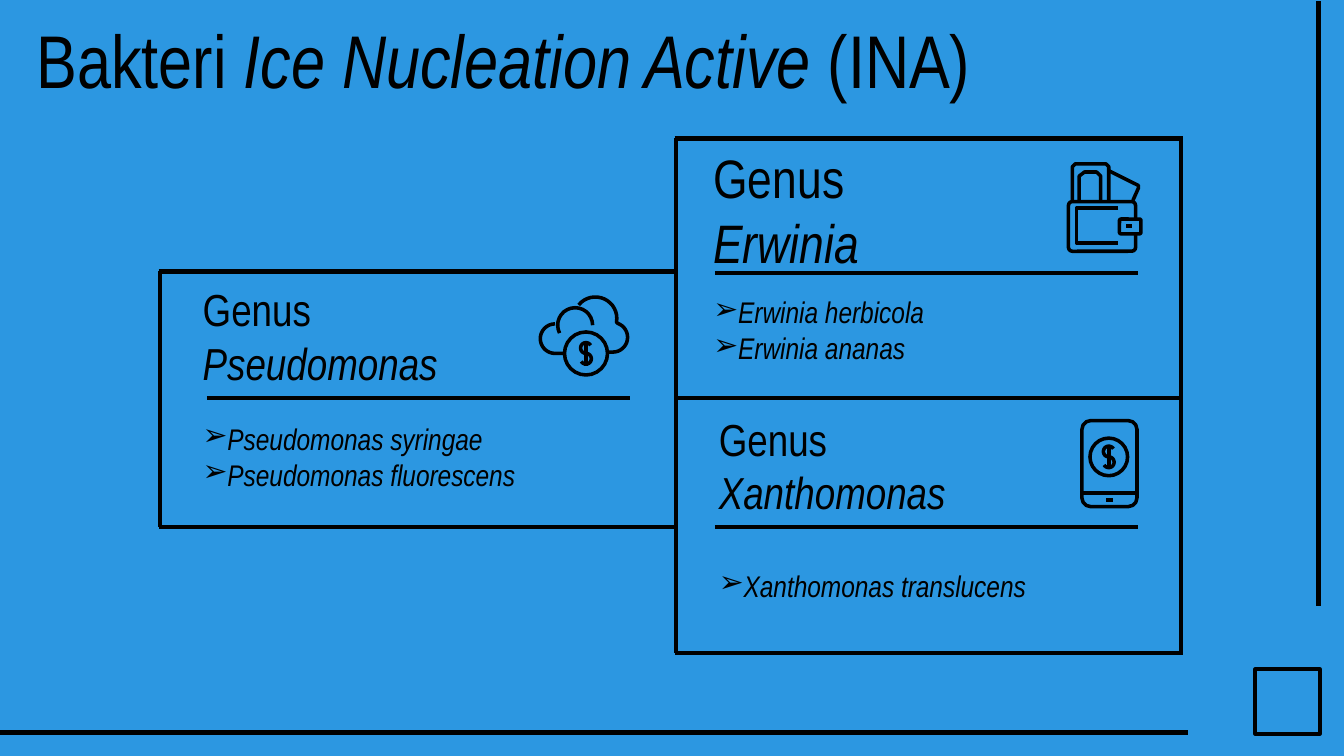
from math import cos, radians, sin

from lxml.etree import SubElement
from pptx import Presentation
from pptx.dml.color import RGBColor
from pptx.enum.shapes import MSO_CONNECTOR, MSO_SHAPE
from pptx.enum.text import MSO_ANCHOR, MSO_AUTO_SIZE, PP_ALIGN
from pptx.oxml.ns import qn
from pptx.util import Inches, Pt

COLORS = {"background": "2C97E1", "ink": "000000"}
FONT = "Arial Narrow"
WIDTH = 10
HEIGHT = WIDTH * 9 / 16
FRAME_WEIGHT, ICON_WEIGHT = 2.25, 1.9

# Grid shared by the cards, in inches
COLUMNS = (1.19, 5.03, 8.79)
ROWS = (1.03, 2.02, 2.96, 3.92, 4.86)
RULE_WIDTH = 3.15

# Cards: heading box, size, rule start, list box, species
CARDS = [
    {"genus": "Pseudomonas", "heading": (1.41, 2.33), "size": 24,
     "rule": (1.54, ROWS[2]), "list": (1.41, 3.06, 3.5),
     "species": ("Pseudomonas syringae", "Pseudomonas fluorescens")},
    {"genus": "Erwinia", "heading": (5.21, 1.39), "size": 29,
     "rule": (5.32, 2.03), "list": (5.21, 2.12, 2.39),
     "species": ("Erwinia herbicola", "Erwinia ananas")},
    {"genus": "Xanthomonas", "heading": (5.25, 3.29), "size": 24,
     "rule": (5.32, ROWS[3]), "list": (5.25, 4.02, 2.95),
     "species": ("Xanthomonas translucens",)},
]


def color(name):
    return RGBColor.from_string(COLORS[name])


def set_line(line, weight):
    line.color.rgb = color("ink")
    line.width = Pt(weight)


def add_line(slide, start, end, weight=FRAME_WEIGHT):
    points = [Inches(value) for value in (*start, *end)]
    line = slide.shapes.add_connector(MSO_CONNECTOR.STRAIGHT, *points)
    set_line(line.line, weight)
    SubElement(line._element.spPr, qn("a:effectLst"))


def add_outline(slide, kind, box, weight=ICON_WEIGHT, radius=None, fill=None):
    shape = slide.shapes.add_shape(kind, *map(Inches, box))
    shape.shadow.inherit = False
    if radius is not None:
        shape.adjustments[0] = radius
    if fill:
        shape.fill.solid()
        shape.fill.fore_color.rgb = color(fill)
    else:
        shape.fill.background()
    set_line(shape.line, weight)


def add_stroke(slide, points):
    first, *rest = [(Inches(x), Inches(y)) for x, y in points]
    builder = slide.shapes.build_freeform(*first)
    builder.add_line_segments(rest, close=False)
    shape = builder.convert_to_shape()
    shape.shadow.inherit = False
    shape.fill.background()
    set_line(shape.line, ICON_WEIGHT)


def arc(x, y, radius, start, end, steps=16):
    angles = [radians(start + (end - start) * i / steps) for i in range(steps + 1)]
    return [(x + radius * cos(a), y + radius * sin(a)) for a in angles]


def format_frame(shape, anchor):
    frame = shape.text_frame
    settings = {"word_wrap": True, "auto_size": MSO_AUTO_SIZE.NONE,
                "vertical_anchor": anchor}
    settings |= {f"margin_{side}": Inches(0.1)
                 for side in ("left", "top", "right", "bottom")}
    for name, value in settings.items():
        setattr(frame, name, value)
    return frame


def add_text_box(slide, box):
    shape = slide.shapes.add_textbox(*map(Inches, box))
    return format_frame(shape, MSO_ANCHOR.MIDDLE)


def add_run(paragraph, text, size, italic=False):
    run = paragraph.add_run()
    run.text = text
    for name, value in {"name": FONT, "size": Pt(size), "italic": italic}.items():
        setattr(run.font, name, value)
    run.font.color.rgb = color("ink")


def add_bullet(paragraph):
    properties = paragraph._p.get_or_add_pPr()
    indent = Inches(0.18)
    properties.set("marL", str(indent))
    properties.set("indent", str(-indent))
    bullet_color = SubElement(properties, qn("a:buClr"))
    SubElement(bullet_color, qn("a:srgbClr"), val=COLORS["ink"])
    SubElement(properties, qn("a:buFont"), typeface=FONT)
    SubElement(properties, qn("a:buChar"), char="➢")


def add_title(slide):
    title = slide.shapes.title
    box = {"left": 0.17, "top": 0, "width": 8.44, "height": 1.43}
    for name, value in box.items():
        setattr(title, name, Inches(value))
    paragraph = format_frame(title, MSO_ANCHOR.TOP).paragraphs[0]
    paragraph.alignment = PP_ALIGN.LEFT
    add_run(paragraph, "Bakteri ", 40)
    add_run(paragraph, "Ice Nucleation Active ", 40, italic=True)
    add_run(paragraph, "(INA)", 40)


def add_card(slide, card):
    x, y = card["rule"]
    add_line(slide, (x, y), (x + RULE_WIDTH, y))

    heading = add_text_box(slide, (*card["heading"], 2.58, 0.34)).paragraphs[0]
    add_run(heading, "Genus", card["size"])
    heading.add_line_break()
    add_run(heading, card["genus"], card["size"], italic=True)

    frame = add_text_box(slide, (*card["list"], 0.67))
    for index, name in enumerate(card["species"]):
        paragraph = frame.add_paragraph() if index else frame.paragraphs[0]
        add_bullet(paragraph)
        add_run(paragraph, name, 16, italic=True)


def add_frames(slide):
    left, middle, right = COLUMNS
    top, upper, center, lower, bottom = ROWS
    overlap = 0.01  # closes the corners where lines meet
    # Card outlines
    for x, start, end in ((left, upper, lower), (middle, top, bottom), (right, top, bottom)):
        add_line(slide, (x, start), (x, end))
    for y in (top, center, bottom):
        add_line(slide, (middle - overlap, y), (right + overlap, y))
    for y in (upper, lower):
        add_line(slide, (left - overlap, y), (middle, y))
    # Slide edge decoration
    add_line(slide, (9.81, 0.01), (9.81, 4.51))
    add_line(slide, (0, 5.45), (8.84, 5.45))
    add_outline(slide, MSO_SHAPE.RECTANGLE, (9.34, 4.98, 0.48, 0.48), FRAME_WEIGHT)


def add_coin(slide, x, y, radius):
    add_outline(slide, MSO_SHAPE.OVAL, (x - radius, y - radius, 2 * radius, 2 * radius))
    bend = 0.04
    add_stroke(slide, arc(x, y - bend, bend, -30, -270) + arc(x, y + bend, bend, -90, 150))
    add_line(slide, (x, y - 0.09), (x, y + 0.09), ICON_WEIGHT)


def add_cloud_icon(slide):
    left_lobe = arc(4.13, 2.52, 0.11, 90, 270)
    right_lobe = arc(4.56, 2.51, 0.11, -70, 90)
    add_stroke(slide, [(4.2, 2.63)] + left_lobe)
    add_stroke(slide, arc(4.28, 2.42, 0.13, 153, 360))
    add_stroke(slide, arc(4.43, 2.37, 0.16, 219, 370) + right_lobe + [(4.53, 2.62)])
    add_coin(slide, 4.36, 2.63, 0.16)


def add_wallet_icon(slide):
    add_stroke(slide, [(7.98, 1.49), (7.98, 1.24), (8, 1.22),
                       (8.23, 1.22), (8.25, 1.24), (8.25, 1.49)])
    add_stroke(slide, [(8.03, 1.49), (8.03, 1.31), (8.07, 1.28),
                       (8.16, 1.28), (8.19, 1.31), (8.19, 1.49)])
    add_stroke(slide, [(8.25, 1.27), (8.47, 1.38), (8.47, 1.4), (8.43, 1.49)])
    add_outline(slide, MSO_SHAPE.ROUNDED_RECTANGLE, (7.95, 1.5, 0.5, 0.37), radius=0.08)
    add_stroke(slide, [(8.32, 1.55), (8.01, 1.55), (8.01, 1.81), (8.32, 1.81)])
    add_outline(slide, MSO_SHAPE.ROUNDED_RECTANGLE, (8.33, 1.63, 0.16, 0.11),
                radius=0.1, fill="background")
    add_line(slide, (8.38, 1.68), (8.42, 1.68), ICON_WEIGHT)


def add_phone_icon(slide):
    add_outline(slide, MSO_SHAPE.ROUNDED_RECTANGLE, (8.05, 3.13, 0.41, 0.64), radius=0.16)
    add_line(slide, (8.05, 3.67), (8.46, 3.67), ICON_WEIGHT)
    add_line(slide, (8.23, 3.72), (8.28, 3.72), ICON_WEIGHT)
    add_coin(slide, 8.25, 3.4, 0.14)


def main():
    presentation = Presentation()
    presentation.slide_width = Inches(WIDTH)
    presentation.slide_height = Inches(HEIGHT)
    slide = presentation.slides.add_slide(presentation.slide_layouts[5])
    slide.background.fill.solid()
    slide.background.fill.fore_color.rgb = color("background")

    add_frames(slide)
    add_title(slide)
    for card in CARDS:
        add_card(slide, card)
    for add_icon in (add_cloud_icon, add_wallet_icon, add_phone_icon):
        add_icon(slide)
    presentation.save("out.pptx")


if __name__ == "__main__":
    main()
